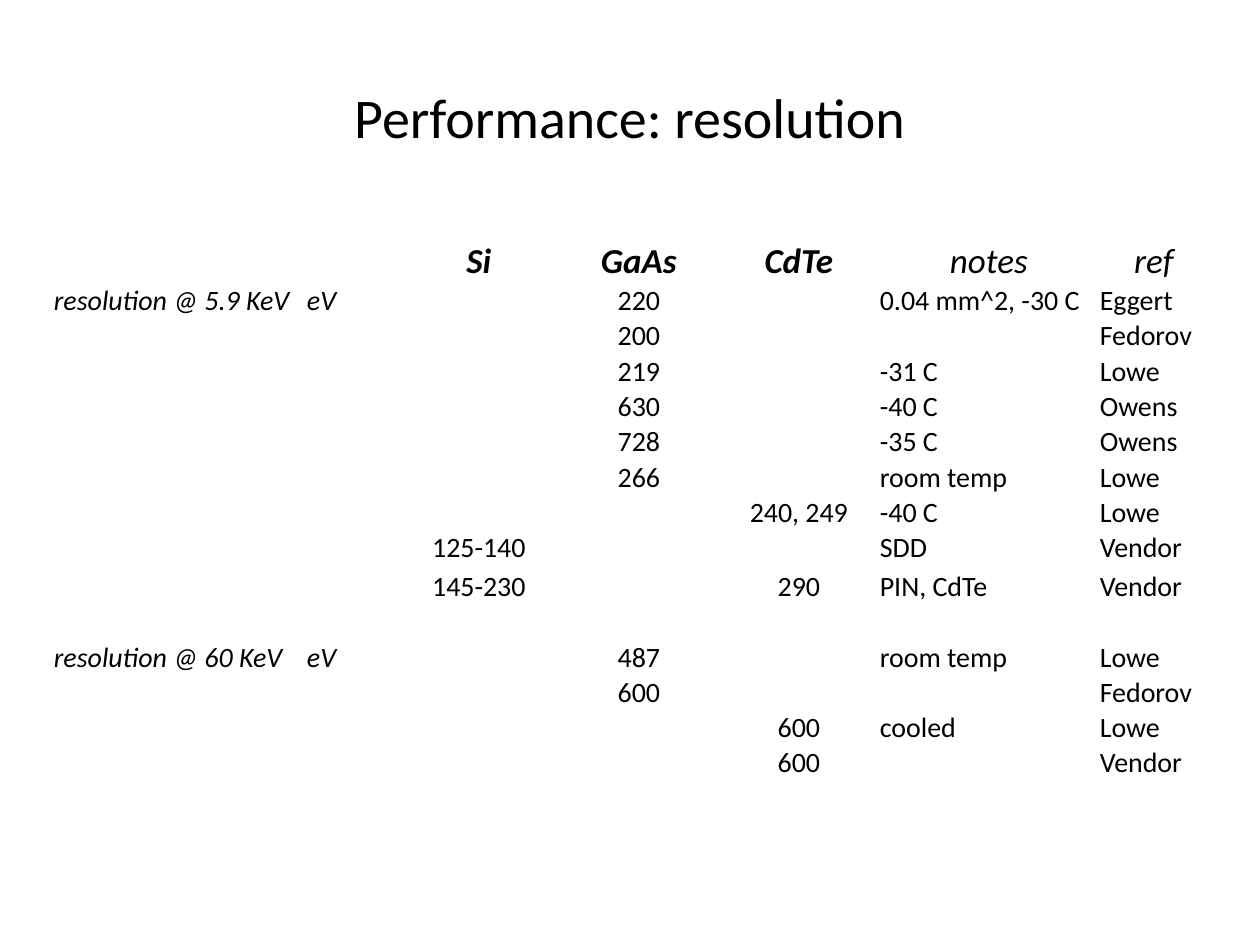
from lxml import etree
from pptx import Presentation
from pptx.dml.color import RGBColor
from pptx.enum.text import MSO_ANCHOR, PP_ALIGN
from pptx.oxml.ns import qn
from pptx.util import Emu, Pt

PX = 914400 // 126
BLACK = RGBColor(0, 0, 0)
FONT = "Calibri"
LEFT, CENTER = PP_ALIGN.LEFT, PP_ALIGN.CENTER
BOTTOM, MIDDLE = MSO_ANCHOR.BOTTOM, MSO_ANCHOR.MIDDLE
TITLE_ONLY = 5

TITLE = "Performance: resolution"
HEADER = ["", "", "Si", "GaAs", "CdTe", "notes", "ref"]
# quantity, unit, Si, GaAs, CdTe, notes, ref
MEASUREMENTS = [
    ["resolution @ 5.9 KeV", "eV", "", "220", "", "0.04 mm^2, -30 C", "Eggert"],
    ["", "", "", "200", "", "", "Fedorov"],
    ["", "", "", "219", "", "-31 C", "Lowe"],
    ["", "", "", "630", "", "-40 C", "Owens"],
    ["", "", "", "728", "", "-35 C", "Owens"],
    ["", "", "", "266", "", "room temp", "Lowe"],
    ["", "", "", "", "240, 249", "-40 C", "Lowe"],
    ["", "", "125-140", "", "", "SDD", "Vendor"],
    ["", "", "145-230", "", "290", "PIN, CdTe", "Vendor"],
    ["", "", "", "", "", "", ""],
    ["resolution @ 60 KeV", "eV", "", "487", "", "room temp", "Lowe"],
    ["", "", "", "600", "", "", "Fedorov"],
    ["", "", "", "", "600", "cooled", "Lowe"],
    ["", "", "", "", "600", "", "Vendor"],
]
MATERIALS = range(2, 5)
LABELS = range(0, 2)

COLUMN_WIDTHS = [253, 93, 160, 160, 160, 220, 110]
HEADER_HEIGHT, ROW_HEIGHT = 63, 34
SPECIAL_HEIGHTS = {2: 18, 9: 39}
TABLE_LEFT, TABLE_TOP = 53, 220
CELL_FORMAT = {
    "margin_left": Emu(PX), "margin_right": Emu(PX),
    "margin_top": Emu(PX), "margin_bottom": 0,
    "vertical_anchor": BOTTOM,
}


def apply(target, values):
    for name, value in values.items():
        setattr(target, name, value)


def write(paragraph, text, align, size, bold=False, italic=False):
    paragraph.alignment = align
    run = paragraph.add_run()
    run.text = text
    apply(run.font, {"name": FONT, "size": Pt(size), "bold": bold, "italic": italic})
    run.font.color.rgb = BLACK


def fill_cell(cell, text, row, column):
    apply(cell, CELL_FORMAT)
    cell.fill.background()
    paragraph = cell.text_frame.paragraphs[0]
    is_header = row == 0
    if text:
        write(paragraph, text,
              CENTER if is_header or column in MATERIALS else LEFT,
              20 if is_header else 16,
              bold=is_header and column in MATERIALS,
              italic=is_header or column in LABELS)
    else:
        # An empty cell takes its line height from the end-of-paragraph size
        etree.SubElement(paragraph._p, qn("a:endParaRPr"), sz="1600")


def add_title(slide):
    title = slide.shapes.title
    apply(title, {"left": 63 * PX, "top": 38 * PX, "width": 1134 * PX, "height": 157 * PX})
    title.text_frame.vertical_anchor = MIDDLE
    write(title.text_frame.paragraphs[0], TITLE, CENTER, 32)


def add_measurements(slide):
    rows = [HEADER] + MEASUREMENTS
    heights = [HEADER_HEIGHT] + [
        SPECIAL_HEIGHTS.get(row, ROW_HEIGHT) for row in range(1, len(rows))]
    table = slide.shapes.add_table(
        len(rows), len(HEADER), TABLE_LEFT * PX, TABLE_TOP * PX,
        sum(COLUMN_WIDTHS) * PX, sum(heights) * PX).table
    apply(table, {"first_row": False, "horz_banding": False})
    for column, width in zip(table.columns, COLUMN_WIDTHS):
        column.width = width * PX
    for row, (texts, height) in enumerate(zip(rows, heights)):
        table.rows[row].height = height * PX
        for column, text in enumerate(texts):
            fill_cell(table.cell(row, column), text, row, column)


def main():
    deck = Presentation()
    deck.slide_width, deck.slide_height = 1260 * PX, 945 * PX
    slide = deck.slides.add_slide(deck.slide_layouts[TITLE_ONLY])
    add_title(slide)
    add_measurements(slide)
    deck.save("out.pptx")


if __name__ == "__main__":
    main()
